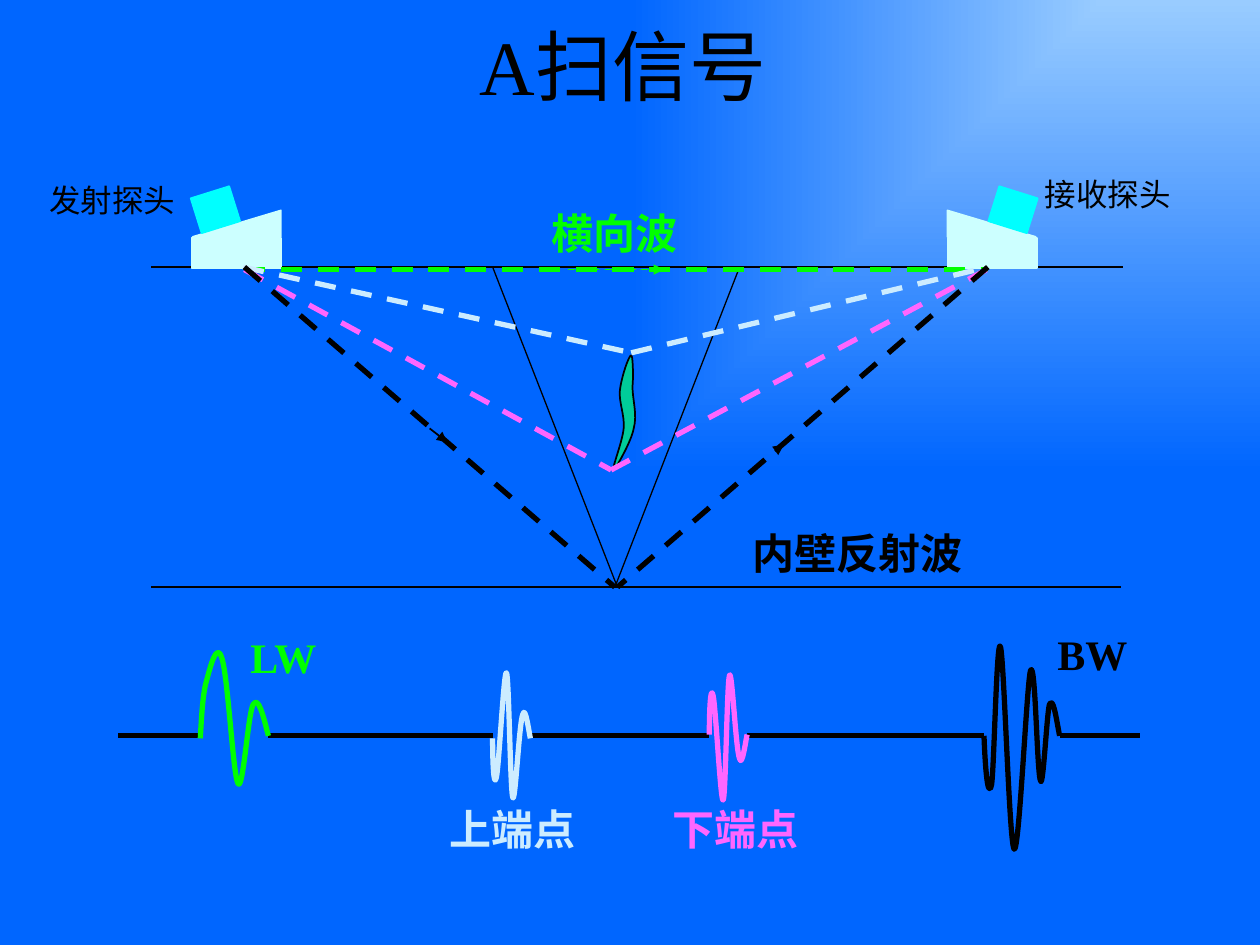
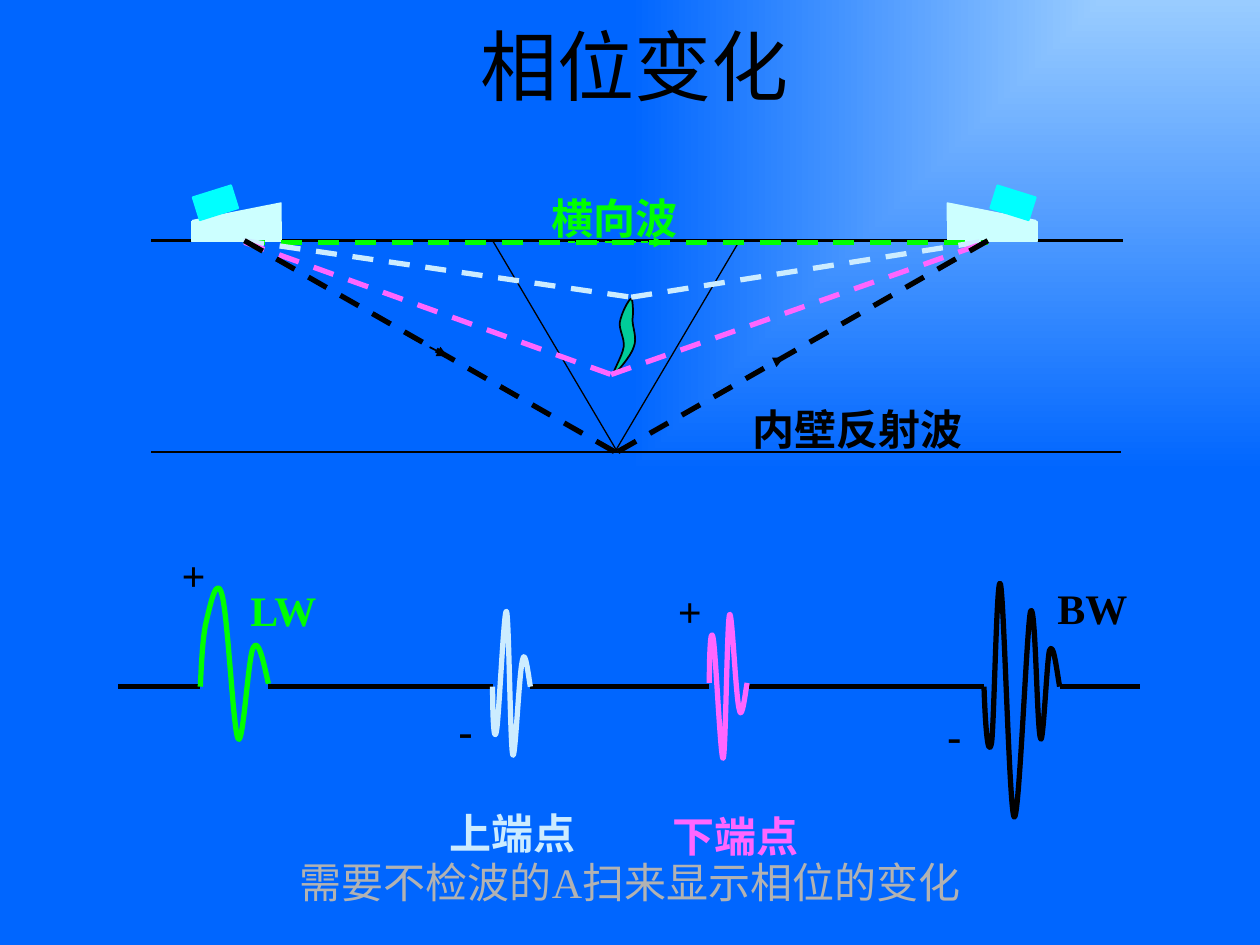
from dataclasses import dataclass
from typing import NamedTuple

from pptx import Presentation
from pptx.dml.color import RGBColor
from pptx.enum.dml import MSO_LINE
from pptx.enum.shapes import MSO_CONNECTOR, MSO_SHAPE
from pptx.enum.text import MSO_ANCHOR, MSO_AUTO_SIZE, PP_ALIGN
from pptx.oxml.ns import qn
from pptx.oxml.xmlchemy import OxmlElement
from pptx.util import Inches, Pt

DASH = MSO_LINE.DASH
STRAIGHT = MSO_CONNECTOR.STRAIGHT
RECTANGLE, RIGHT_TRIANGLE = MSO_SHAPE.RECTANGLE, MSO_SHAPE.RIGHT_TRIANGLE
MIDDLE, CENTER = MSO_ANCHOR.MIDDLE, PP_ALIGN.CENTER
FIXED_SIZE, FIT_SHAPE = MSO_AUTO_SIZE.NONE, MSO_AUTO_SIZE.SHAPE_TO_FIT_TEXT
TITLE_ONLY = 5


@dataclass(frozen=True)
class Theme:
    font: str = "Times New Roman"
    glow: str = "99CCFF"
    background: str = "0066FF"
    ink: str = "000000"
    lateral: str = "00FF00"
    upper_tip: str = "CCECFF"
    lower_tip: str = "FF66FF"
    wedge: str = "CCFFFF"
    crystal: str = "00FFFF"
    flaw: str = "00CC99"
    caption: str = "B2B2B2"
    title_size: int = 44
    label_size: int = 24
    probe_size: int = 18
    signal_line: float = 3
    wall_line: float = 1.5
    outline: float = 1
    bevel_line: float = 0.75


THEME = Theme()
Point = tuple[float, float]


class Label(NamedTuple):
    text: str
    left: float
    top: float
    width: float
    height: float = 0.5
    color: str = THEME.ink
    size: int = THEME.label_size
    bold: bool = True
    wrap: bool = False


class Ray(NamedTuple):
    start: Point
    end: Point
    color: str = THEME.ink
    width: float = THEME.signal_line
    dashed: bool = False
    arrow: bool = False


class Echo(NamedTuple):
    color: str
    points: tuple[Point, ...]


@dataclass(frozen=True)
class ScanView:
    title: str
    title_left: float
    surface: float
    depth_scale: float
    baseline: float
    echo_scale: float
    echo_starts: tuple[float, ...]
    label_tops: tuple[float, ...]
    notes: tuple[Label, ...]


# Rays and walls: (x, depth below the surface)
BOTTOM = 2.54
UPPER_TIP, LOWER_TIP = (5.01, 0.68), (4.85, 1.61)
WALLS = (
    Ray((1.2, 0), (8.91, 0), width=THEME.wall_line),
    Ray((1.2, BOTTOM), (8.9, BOTTOM), width=THEME.wall_line),
    Ray((4.9, BOTTOM), (3.91, 0), width=THEME.bevel_line),
    Ray((4.88, BOTTOM), (5.87, 0), width=THEME.bevel_line),
)
RAYS = (
    Ray((1.94, 0.02), (7.84, 0.02), THEME.lateral, dashed=True),
    Ray((4.51, 0.02), (5.27, 0.02), THEME.lateral, THEME.outline, True, True),
    Ray((1.93, 0), UPPER_TIP, THEME.upper_tip, dashed=True),
    Ray(UPPER_TIP, (7.84, 0), THEME.upper_tip, dashed=True),
    Ray((1.94, 0.02), LOWER_TIP, THEME.lower_tip, dashed=True),
    Ray(LOWER_TIP, (7.83, 0.02), THEME.lower_tip, dashed=True),
    Ray((3.41, 1.28), (3.55, 1.39), width=THEME.outline, arrow=True),
    Ray((6.15, 1.46), (6.22, 1.41), width=THEME.outline, arrow=True),
    Ray((1.94, 0), (4.88, BOTTOM), dashed=True),
    Ray((7.84, 0), (4.9, BOTTOM), dashed=True),
)

# Curves: a start point, then three Bezier points per segment
FLAW = (
    (5.01, 0.70), (4.99, 0.70), (4.93, 0.88), (4.92, 0.98),
    (4.91, 1.07), (4.96, 1.18), (4.95, 1.28),
    (4.94, 1.39), (4.85, 1.61), (4.87, 1.61),
    (4.88, 1.61), (5.01, 1.39), (5.03, 1.28),
    (5.06, 1.17), (5.02, 1.05), (5.02, 0.95),
    (5.03, 0.85), (5.02, 0.69), (5.01, 0.70),
)

# Echoes: (x, offset from the echo's first point)
LATERAL_ECHO = (
    (1.59, 0), (1.6, -0.18), (1.61, -0.36), (1.64, -0.46),
    (1.67, -0.57), (1.72, -0.77), (1.76, -0.64),
    (1.81, -0.5), (1.85, 0.3), (1.89, 0.36),
    (1.93, 0.42), (1.97, -0.21), (2.01, -0.27),
    (2.05, -0.34), (2.09, -0.18), (2.13, -0.02),
)
UPPER_ECHO = (
    (3.91, 0), (3.91, 0.2), (3.92, 0.4), (3.94, 0.31),
    (3.96, 0.23), (4.0, -0.55), (4.02, -0.52),
    (4.04, -0.5), (4.05, 0.41), (4.07, 0.47),
    (4.09, 0.53), (4.12, -0.12), (4.15, -0.19),
    (4.17, -0.27), (4.2, -0.04), (4.21, 0),
)
LOWER_ECHO = tuple((x + 1.72, -y) for x, y in UPPER_ECHO)  # opposite phase
BACKWALL_ECHO = (
    (7.81, 0), (7.82, 0.26), (7.84, 0.51), (7.87, 0.39),
    (7.89, 0.28), (7.91, -0.79), (7.94, -0.71),
    (7.97, -0.63), (8.01, 0.87), (8.05, 0.9),
    (8.09, 0.93), (8.15, -0.43), (8.18, -0.52),
    (8.22, -0.61), (8.23, 0.32), (8.26, 0.36),
    (8.28, 0.41), (8.31, -0.19), (8.33, -0.25),
    (8.36, -0.31), (8.38, -0.16), (8.41, 0),
)
ECHOES = (
    Echo(THEME.lateral, LATERAL_ECHO),
    Echo(THEME.upper_tip, UPPER_ECHO),
    Echo(THEME.lower_tip, LOWER_ECHO),
    Echo(THEME.ink, BACKWALL_ECHO),
)
TRACE_START, TRACE_END = 0.94, 9.05
PROBE_MIRROR = 9.75  # left edge + right edge of a mirrored pair

# Labels on both slides; each view gives their tops
SHARED_LABELS = (
    Label("横向波", 4.27, 0, 1.21, color=THEME.lateral),
    Label("LW", 1.87, 0, 0.76, color=THEME.lateral),
    Label("上端点", 3.46, 0, 1.21, color=THEME.upper_tip),
    Label("下端点", 5.23, 0, 1.21, color=THEME.lower_tip),
    Label("内壁反射波", 5.86, 0, 1.89),
    Label("BW", 8.29, 0, 0.76),
)
VIEWS = (
    ScanView(
        "A扫信号", 1.33, 2.12, 1, 5.84, 1,
        (5.86, 5.86, 5.83, 5.84), (1.6, 4.96, 6.33, 6.33, 4.14, 4.94),
        (
            Label("发射探头", 0.29, 1.39, 1.2, 0.4, size=THEME.probe_size, bold=False),
            Label("接收探头", 8.19, 1.34, 1.2, 0.4, size=THEME.probe_size, bold=False),
        ),
    ),
    ScanView(
        "相位变化", 1.42, 1.91, 0.66, 5.45, 1.15,
        (5.45, 5.45, 5.42, 5.45), (1.48, 4.59, 6.36, 6.38, 3.15, 4.57),
        (
            Label("+", 1.34, 4.31, 0.39),
            Label("-", 3.54, 5.54, 0.31),
            Label("+", 5.28, 4.6, 0.39),
            Label("-", 7.42, 5.58, 0.31),
            Label("需要不检波的A扫来显示相位的变化", 0, 6.75, 10,
                  color=THEME.caption, bold=False, wrap=True),
        ),
    ),
)


def rgb(color: str) -> RGBColor:
    return RGBColor.from_string(color)


def set_background(master) -> None:
    """Gradient that spreads from the top right corner."""
    fill = master.background.fill
    fill.gradient()
    for stop, color in zip(fill.gradient_stops, (THEME.glow, THEME.background)):
        stop.color.rgb = rgb(color)
    gradient = next(master._element.iter(qn("a:gradFill")))
    gradient.remove(gradient.find(qn("a:lin")))
    spread = OxmlElement("a:path")
    spread.set("path", "rect")
    focus = OxmlElement("a:fillToRect")
    focus.set("l", "100000")
    focus.set("b", "100000")
    spread.append(focus)
    gradient.append(spread)


def write_text(shape, text: str, size: int, color: str, bold: bool = False) -> None:
    frame = shape.text_frame
    frame.text = text
    frame.vertical_anchor = MIDDLE
    paragraph = frame.paragraphs[0]
    paragraph.alignment = CENTER
    font = paragraph.runs[0].font
    font.name, font.size, font.bold = THEME.font, Pt(size), bold
    font.color.rgb = rgb(color)


def add_label(slide, label: Label) -> None:
    box = slide.shapes.add_textbox(*map(Inches, label[1:5]))
    write_text(box, label.text, label.size, label.color, label.bold)
    box.text_frame.word_wrap = label.wrap
    box.text_frame.auto_size = FIT_SHAPE


def add_ray(slide, ray: Ray) -> None:
    connector = slide.shapes.add_connector(STRAIGHT, *map(Inches, ray.start + ray.end))
    line = connector.line
    line.color.rgb, line.width = rgb(ray.color), Pt(ray.width)
    if ray.dashed:
        line.dash_style = DASH
    if ray.arrow:
        arrowhead = OxmlElement("a:tailEnd")
        arrowhead.set("type", "triangle")
        line._get_or_add_ln().append(arrowhead)
    connector._element.spPr.append(OxmlElement("a:effectLst"))


def paint(shape, fill: str | None, line: str, width: float) -> None:
    shape.shadow.inherit = False
    if fill:
        shape.fill.solid()
        shape.fill.fore_color.rgb = rgb(fill)
    else:
        shape.fill.background()
    shape.line.color.rgb, shape.line.width = rgb(line), Pt(width)


def add_curve(slide, points: list[Point], closed: bool = False):
    corners = [(Inches(x), Inches(y)) for x, y in points]
    builder = slide.shapes.build_freeform(*corners[0])
    builder.add_line_segments(corners[1:], close=closed)
    shape = builder.convert_to_shape()
    # Join every three straight steps into one Bezier segment
    steps = list(shape._element.iter(qn("a:lnTo")))
    for index in range(0, len(steps), 3):
        curve = OxmlElement("a:cubicBezTo")
        steps[index].addprevious(curve)
        for step in steps[index:index + 3]:
            curve.append(step[0])
            step.getparent().remove(step)
    return shape


def add_probe(slide, view: ScanView, mirrored: bool) -> None:
    parts = (
        (RECTANGLE, 1.52, -0.23, 0.71, 0.24, THEME.wedge, 0),
        (RIGHT_TRIANGLE, 1.53, -0.45, 0.7, 0.21, THEME.wedge, 0),
        (RECTANGLE, 1.55, -0.6, 0.32, 0.29, THEME.crystal, -17.4),
    )
    for kind, left, depth, width, height, color, turn in parts:
        shape = slide.shapes.add_shape(
            kind,
            Inches(PROBE_MIRROR - left - width if mirrored else left),
            Inches(view.surface + depth * view.depth_scale),
            Inches(width), Inches(height * view.depth_scale),
        )
        paint(shape, color, color, THEME.outline)
        shape.rotation = -turn if mirrored else turn
        if kind == RIGHT_TRIANGLE and not mirrored:
            shape._element.spPr.find(qn("a:xfrm")).set("flipH", "1")


def add_scan_slide(presentation, view: ScanView) -> None:
    slide = presentation.slides.add_slide(presentation.slide_layouts[TITLE_ONLY])

    def at_depth(point: Point) -> Point:
        return point[0], view.surface + point[1] * view.depth_scale

    # Title
    title = slide.shapes.title
    title.left, title.top = Inches(view.title_left), Inches(0)
    title.width, title.height = Inches(7.23), Inches(1.02)
    write_text(title, view.title, THEME.title_size, THEME.ink)
    title.text_frame.auto_size = FIXED_SIZE

    # Test piece, probes, flaw and rays
    for wall in WALLS:
        add_ray(slide, wall._replace(start=at_depth(wall.start), end=at_depth(wall.end)))
    for mirrored in (False, True):
        add_probe(slide, view, mirrored)
    flaw = add_curve(slide, [at_depth(point) for point in FLAW], closed=True)
    paint(flaw, THEME.flaw, THEME.ink, THEME.outline)
    for ray in RAYS:
        add_ray(slide, ray._replace(start=at_depth(ray.start), end=at_depth(ray.end)))

    # Signal trace: flat between the echoes
    echo_ends = [echo.points[end][0] for echo in ECHOES for end in (0, -1)]
    edges = [TRACE_START, *echo_ends, TRACE_END]
    for left, right in zip(edges[::2], edges[1::2]):
        add_ray(slide, Ray((left, view.baseline), (right, view.baseline)))
    for echo, start in zip(ECHOES, view.echo_starts):
        points = [(x, start + y * view.echo_scale) for x, y in echo.points]
        paint(add_curve(slide, points), None, echo.color, THEME.signal_line)

    # Labels
    for label, top in zip(SHARED_LABELS, view.label_tops):
        add_label(slide, label._replace(top=top))
    for note in view.notes:
        add_label(slide, note)


def main() -> None:
    presentation = Presentation()
    presentation.slide_width, presentation.slide_height = Inches(10), Inches(7.5)
    set_background(presentation.slide_master)
    for view in VIEWS:
        add_scan_slide(presentation, view)
    presentation.save("out.pptx")


if __name__ == "__main__":
    main()
